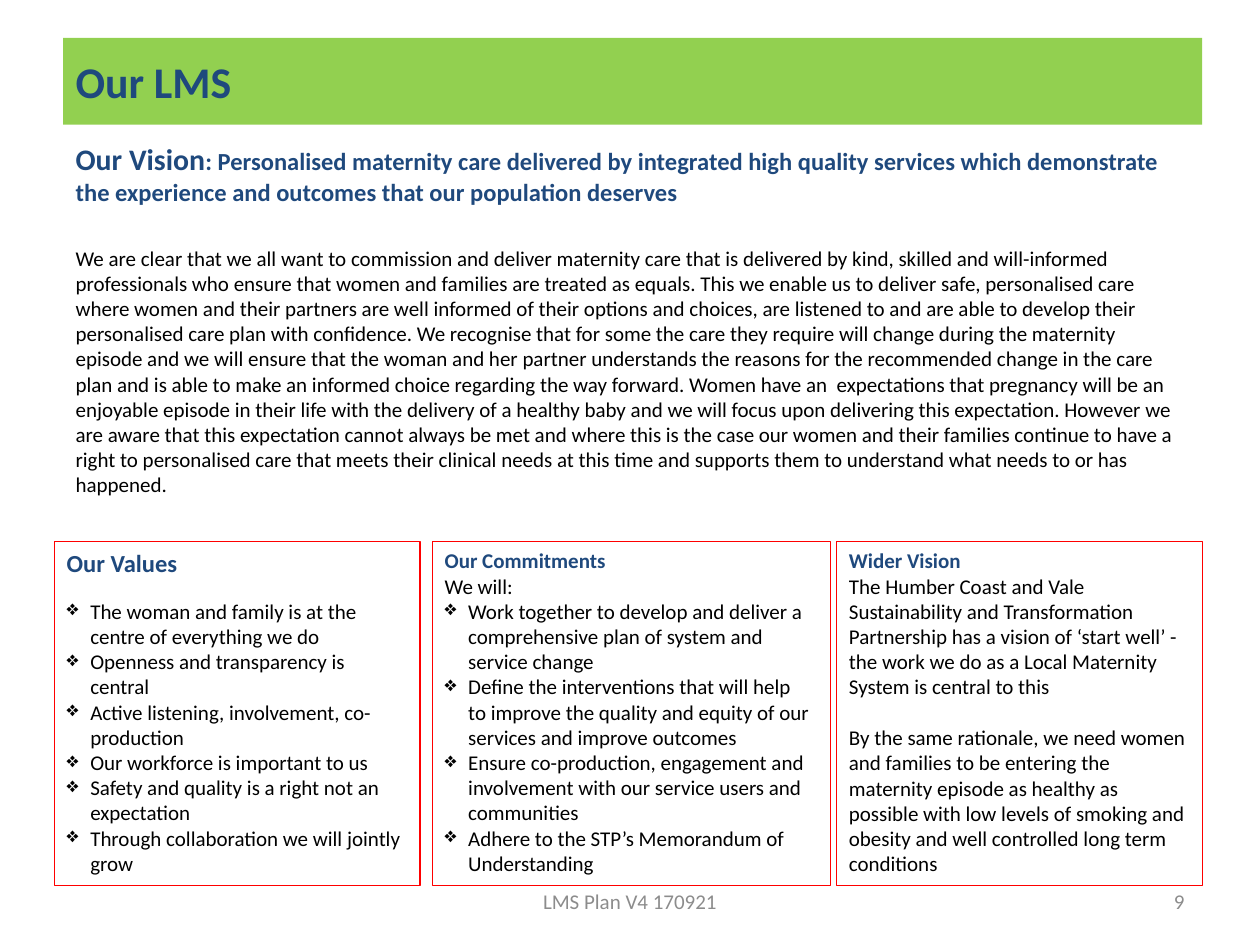
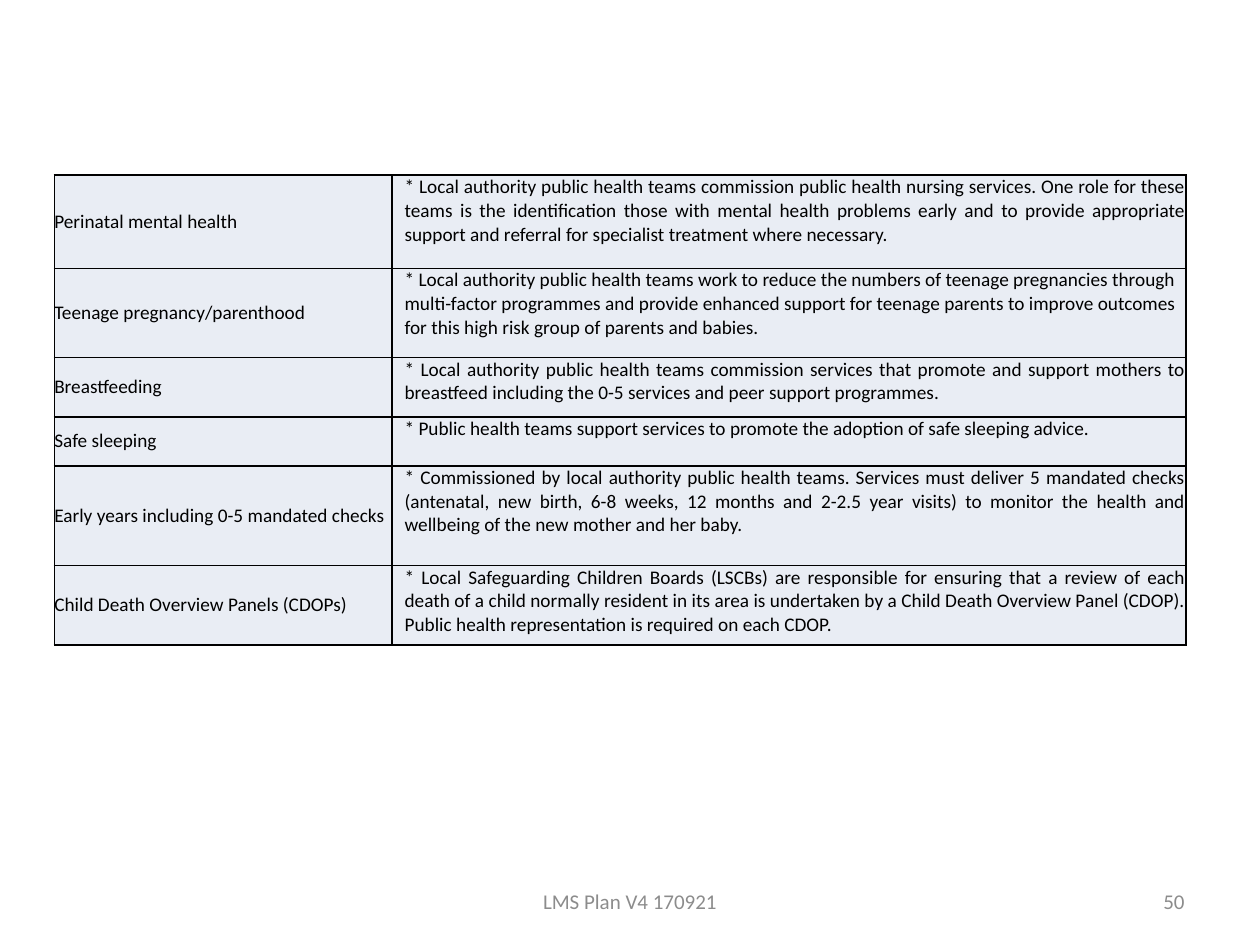
from pptx import Presentation
from pptx.dml.color import RGBColor
from pptx.enum import text as t
from pptx.oxml import parse_xml
from pptx.oxml.ns import nsdecls
from pptx.util import Pt

NAVY, BLACK, GREY = "1F497D", "000000", "8C8C8C"
GREEN, RED, PALE = "92D050", "FF0000", "E9EDF4"
FACE = "Calibri"
LEFT, MID, RIGHT, JUST = (t.PP_ALIGN.LEFT, t.PP_ALIGN.CENTER,
                          t.PP_ALIGN.RIGHT, t.PP_ALIGN.JUSTIFY)

VISION = (": Personalised maternity care delivered by integrated high quality services "
          "which demonstrate the experience and outcomes that our population deserves")
ABOUT = [
    "We are clear that we all want to commission and deliver maternity care that is "
    "delivered by kind, skilled and will-informed professionals who ensure that women "
    "and families are treated as equals.",
    "This we enable us to deliver safe, personalised "
    "care where women and their partners are well informed of their options and choices, "
    "are listened to and are able to develop their personalised care plan with confidence.",
    "We recognise that for some the care they require will change during the maternity "
    "episode and we will ensure that the woman and her partner understands the reasons for "
    "the recommended change in the care plan and is able to make an informed choice "
    "regarding the way forward.",
    "Women have an  expectations that pregnancy will be an "
    "enjoyable episode in their life with the delivery of a healthy baby and we will focus "
    "upon delivering this expectation.",
    "However we are aware that this expectation cannot "
    "always be met and where this is the case our women and their families continue to have "
    "a right to personalised care that meets their clinical needs at this time and supports "
    "them to understand what needs to or has happened."]

VALUES = [
    "The woman and family is at the centre of everything we do",
    "Openness and transparency is central",
    "Active listening, involvement, co-production",
    "Our workforce is important to us",
    "Safety and quality is a right not an expectation",
    "Through collaboration we will jointly grow"]
PLEDGES = [
    "Work together to develop and deliver a comprehensive plan of system and service change",
    "Define the interventions that will help  to improve the quality and equity of our "
    "services and improve outcomes",
    "Ensure co-production, engagement and involvement with our service users and communities",
    "Adhere to the STP’s Memorandum of Understanding"]
WIDER = [
    "The Humber Coast and Vale Sustainability and Transformation Partnership has a vision of "
    "‘start well’ - the work we do as a Local Maternity System is central to this",
    "By the same rationale, we need women and families to be entering the maternity episode "
    "as healthy as possible with low levels of smoking and obesity and well controlled long "
    "term conditions"]

TOPICS = [
    (53.3, "Perinatal mental health", JUST,
     "* Local authority public health teams commission public health nursing services. One "
     "role for these teams is the identification those with mental health problems early and "
     "to provide appropriate support and referral for specialist treatment where necessary."),
    (51.1, "Teenage pregnancy/parenthood", LEFT,
     "* Local authority public health teams work to reduce the numbers of teenage pregnancies "
     "through multi-factor programmes and provide enhanced support for teenage parents to "
     "improve outcomes for this high risk group of parents and babies."),
    (33.8, "Breastfeeding", JUST,
     "* Local authority public health teams commission services that promote and support "
     "mothers to breastfeed including the 0-5 services and peer support programmes."),
    (28.1, "Safe sleeping", JUST,
     "* Public health teams support services to promote the adoption of safe sleeping advice."),
    (56.9, "Early years including 0-5 mandated checks", JUST,
     "* Commissioned by local authority public health teams. Services must deliver 5 mandated "
     "checks (antenatal, new birth, 6-8 weeks, 12 months and 2-2.5 year visits) to monitor "
     "the health and wellbeing of the new mother and her baby."),
    (45.4, "Child Death Overview Panels (CDOPs)", JUST,
     "* Local Safeguarding Children Boards (LSCBs) are responsible for ensuring that a review "
     "of each death of a child normally resident in its area is undertaken by a Child Death "
     "Overview Panel (CDOP). Public health representation is required on each CDOP.")]


def tint(part, code):
    """Give a fill or line a solid colour."""
    if hasattr(part, "solid"):
        part.solid()
        part = part.fore_color
    else:
        part = part.color
    part.rgb = RGBColor.from_string(code)


def style(font, size, code=BLACK, bold=False):
    """Set face, size, colour and weight."""
    font.name, font.size, font.bold = FACE, Pt(size), bold
    tint(font.fill, code)


def indent(para, left, first=0, mark=None):
    """Set a paragraph's indents and its bullet."""
    props = para._p.get_or_add_pPr()
    props.set("marL", str(Pt(left)))
    props.set("indent", str(Pt(first)))
    tag = f'a:buChar {nsdecls("a")} char="{mark}"' if mark else f'a:buNone {nsdecls("a")}'
    props.append(parse_xml(f"<{tag}/>"))


def write(frame, words, size=12, code=BLACK, bold=False, align=LEFT, gap=None):
    """Add a styled paragraph, filling the first one if it is empty."""
    para = frame.paragraphs[0]
    if para.runs:
        para = frame.add_paragraph()
    para.text, para.alignment = words, align
    if gap is not None:
        para.space_before = Pt(gap)
    style(para.font, size, code, bold)
    return para


def place(shape, left, top, width, height):
    """Move and size a shape."""
    shape.left, shape.top = Pt(left), Pt(top)
    shape.width, shape.height = Pt(width), Pt(height)


def label(slide, left, top, width, height):
    """Add a wrapping text box."""
    box = slide.shapes.add_textbox(Pt(left), Pt(top), Pt(width), Pt(height))
    box.text_frame.word_wrap = True
    return box


def footer(slide, page):
    """Add the plan name and the page number."""
    for left, width, words, align in ((246, 228, "LMS Plan V4 170921", MID),
                                      (516, 168, str(page), RIGHT)):
        frame = label(slide, left, 500.5, width, 28.8).text_frame
        frame.vertical_anchor = t.MSO_ANCHOR.MIDDLE
        write(frame, words, code=GREY, align=align)


def panel(slide, left, width, head, size=12):
    """Add a red-edged box with a heading and return its text frame."""
    box = label(slide, left, 309.6, width, 196.6)
    tint(box.line, RED)
    box.line.width = Pt(0.75)
    write(box.text_frame, head, size, NAVY, True)
    return box.text_frame


def points(frame, items, gap=0):
    """Add a bulleted list, with a gap above its first item."""
    for num, item in enumerate(items):
        para = write(frame, item, gap=0 if num else gap)
        props = para._p.pPr
        font = props.find("{*}defRPr")
        indent(para, 13.5, -13.5, "❖")
        props.append(font)


def banner(slide, words):
    """Fill the title placeholder as a green band."""
    title = slide.shapes.title
    place(title, 36, 21.6, 651, 49.7)
    tint(title.fill, GREEN)
    title.text_frame.vertical_anchor = t.MSO_ANCHOR.MIDDLE
    write(title.text_frame, words, 25, NAVY, True)


def story(slide):
    """Fill the body placeholder with the vision and its account."""
    body = slide.placeholders[1]
    place(body, 36, 77, 648, 244)
    frame = body.text_frame
    lead = frame.paragraphs[0]
    indent(lead, 0)
    for words, size in (("Our Vision", 17), (VISION, 14)):
        run = lead.add_run()
        run.text = words
        style(run.font, size, NAVY, True)
    para = frame.add_paragraph()
    indent(para, 0)
    para.text, para.space_before = " ".join(ABOUT), Pt(22.3)
    style(para.font, 12)


def edge(cell):
    """Draw thin black borders round a cell."""
    props = cell._tc.get_or_add_tcPr()
    for num, side in enumerate(("lnL", "lnR", "lnT", "lnB")):
        props.insert(num, parse_xml(
            f'<a:{side} {nsdecls("a")} w="{Pt(1)}"><a:solidFill>'
            f'<a:srgbClr val="{BLACK}"/></a:solidFill></a:{side}>'))


def fill(cell, words, align, left=0):
    """Write and format a table cell."""
    cell.margin_left = cell.margin_right = cell.margin_top = cell.margin_bottom = 0
    tint(cell.fill, PALE)
    edge(cell)
    indent(cell.text_frame.paragraphs[0], left)
    write(cell.text_frame, words, 11, align=align)


def grid(slide):
    """Add the table of topics and public health roles."""
    high = sum(row[0] for row in TOPICS)
    table = slide.shapes.add_table(len(TOPICS), 2, Pt(31), Pt(100), Pt(646.6), Pt(high)).table
    table.first_row = table.horz_banding = False
    table.columns[0].width, table.columns[1].width = Pt(193), Pt(453.6)
    for num, (height, topic, align, role) in enumerate(TOPICS):
        table.rows[num].height = Pt(height)
        fill(table.cell(num, 0), topic, JUST)
        fill(table.cell(num, 1), role, align, 7.2)
        table.cell(num, 0).vertical_anchor = t.MSO_ANCHOR.MIDDLE


def main():
    """Build both slides and save them."""
    deck = Presentation()
    deck.slide_width, deck.slide_height = Pt(720), Pt(540)

    slide = deck.slides.add_slide(deck.slide_layouts[1])
    banner(slide, "Our LMS")
    story(slide)
    points(panel(slide, 31, 209, "Our Values", 14), VALUES, 12)
    frame = panel(slide, 247, 227.5, "Our Commitments")
    write(frame, "We will:")
    points(frame, PLEDGES)
    frame = panel(slide, 478, 209, "Wider Vision")
    for words, gap in zip(WIDER, (0, 14.6)):
        write(frame, words, gap=gap)
    footer(slide, 9)

    slide = deck.slides.add_slide(deck.slide_layouts[6])
    grid(slide)
    footer(slide, 50)
    deck.save("out.pptx")


if __name__ == "__main__":
    main()
